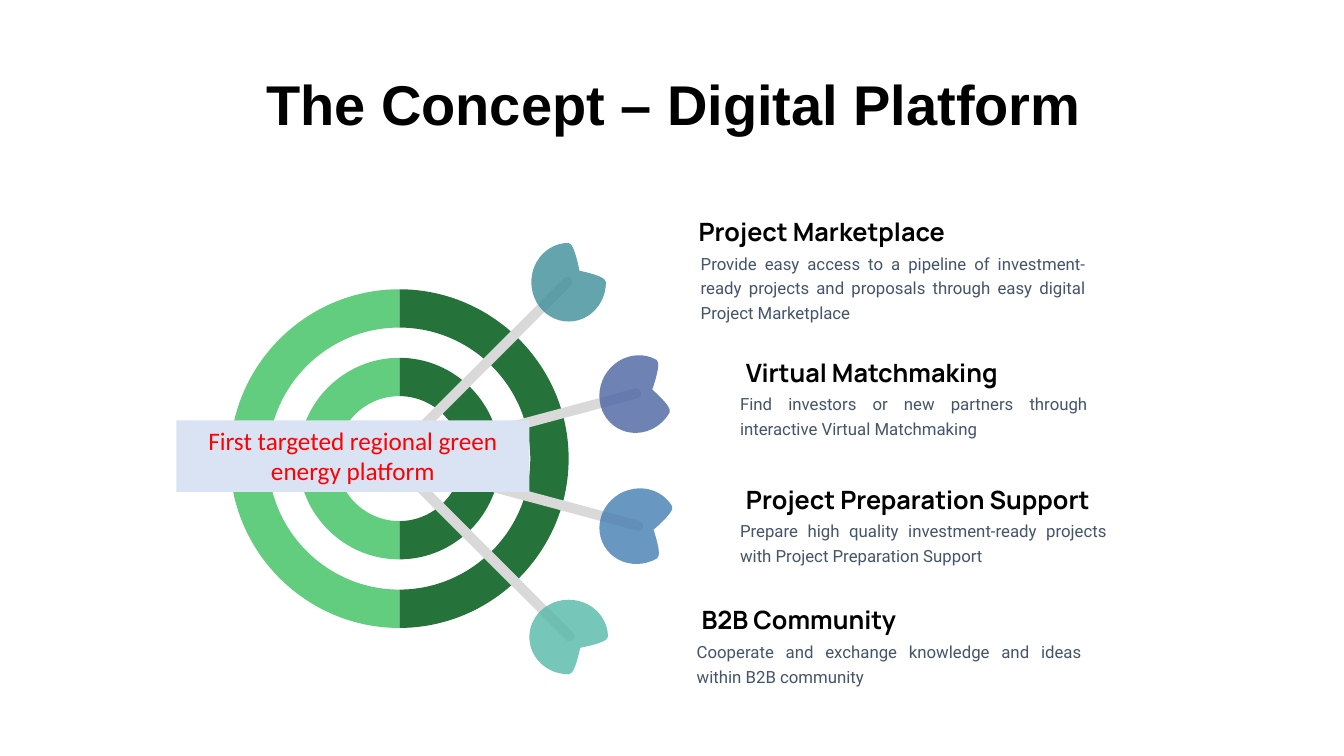
"""Build the digital platform slide: a target hit by four darts, each with a caption."""
from lxml import etree
from pptx import Presentation
from pptx.dml.color import RGBColor
from pptx.enum.shapes import MSO_SHAPE
from pptx.enum.text import MSO_ANCHOR, MSO_AUTO_SIZE, PP_ALIGN
from pptx.oxml.ns import qn
from pptx.util import Inches, Pt

RECTANGLE = MSO_SHAPE.RECTANGLE
ROUNDED = MSO_SHAPE.ROUNDED_RECTANGLE
TEARDROP = MSO_SHAPE.TEAR
TOP, MIDDLE = MSO_ANCHOR.TOP, MSO_ANCHOR.MIDDLE
LEFT, CENTER, JUSTIFY = PP_ALIGN.LEFT, PP_ALIGN.CENTER, PP_ALIGN.JUSTIFY
NO_FIT, GROW = MSO_AUTO_SIZE.NONE, MSO_AUTO_SIZE.SHAPE_TO_FIT_TEXT

BLACK = RGBColor(0x00, 0x00, 0x00)
SLATE = RGBColor(0x44, 0x54, 0x6A)
RED = RGBColor(0xFF, 0x00, 0x00)
PALE_BLUE = RGBColor(0xDA, 0xE3, 0xF3)
DARK_GREEN = RGBColor(0x25, 0x73, 0x3A)
LIGHT_GREEN = RGBColor(0x62, 0xCD, 0x7F)
GREY = RGBColor(0xD9, 0xD9, 0xD9)
INDIGO = RGBColor(0x4A, 0x63, 0xA2)
TEAL = RGBColor(0x3E, 0x8E, 0x99)
MINT = RGBColor(0x54, 0xB8, 0xA8)
BLUE = RGBColor(0x43, 0x7D, 0xB2)

TARGET_X, TARGET_Y = 3.96, 4.55
DISC_RADIUS = 0.32
RINGS = [(1.0, 0.62), (1.68, 1.3)]
BEND = 0.55
HALF_CIRCLE = [(0, -1), (BEND, -1), (1, -BEND), (1, 0), (1, BEND), (BEND, 1), (0, 1)]
CURVE_STARTS = (1, 4, 8, 11)
STRAIGHT = 7
SHAFT_WIDTH, SHAFT_LENGTH = 0.1, 2.27
FLIGHT_WIDTH, FLIGHT_HEIGHT = 0.74, 0.78

# shaft left, shaft top, shaft angle, flight left, flight top, colour
DARTS = [
    (5.21, 3.05, 75, 5.95, 3.52, INDIGO),
    (4.81, 2.43, 45, 5.27, 2.41, TEAL),
    (4.83, 4.41, 135, 5.27, 5.93, MINT),
    (5.23, 3.8, 105, 5.96, 4.83, BLUE),
]

# top, heading left, heading width, body left, body width, body height, heading, body
CAPTIONS = [
    (2.1, 6.83, 2.82, 6.86, 4, 0.8, "Project Marketplace",
     "Provide easy access to a pipeline of investment-ready projects and "
     "proposals through easy digital Project Marketplace"),
    (3.49, 7.3, 2.98, 7.25, 3.63, 0.56, "Virtual Matchmaking",
     "Find investors or new partners through interactive Virtual Matchmaking"),
    (4.75, 7.3, 3.82, 7.25, 3.82, 0.56, "Project Preparation Support",
     "Prepare high quality investment-ready projects with Project Preparation Support"),
    (5.95, 6.86, 2.3, 6.82, 4, 0.56, "B2B Community",
     "Cooperate and exchange knowledge and ideas within B2B community"),
]
BODY_OFFSET = 0.34


def write(frame, text, font, size, color, bold=False, align=LEFT, spacing=1.0):
    """Put one formatted run in the first paragraph of a text frame."""
    para = frame.paragraphs[0]
    para.alignment = align
    para.line_spacing = spacing
    span = para.add_run()
    span.text = text
    span.font.name = font
    span.font.size = Pt(size)
    span.font.bold = bold
    span.font.color.rgb = color


def paint(shape, color):
    """Give a shape a plain fill without outline or shadow."""
    shape.shadow.inherit = False
    shape.fill.solid()
    shape.fill.fore_color.rgb = color
    shape.line.fill.background()


def add_shape(page, kind, left, top, width, height, color, angle=0):
    """Add a painted preset shape."""
    shape = page.shapes.add_shape(
        kind, Inches(left), Inches(top), Inches(width), Inches(height))
    shape.rotation = angle
    paint(shape, color)
    return shape


def add_title(page, text):
    """Place and fill the title placeholder."""
    title = page.shapes.title
    title.left, title.top = Inches(2.54), Inches(0.34)
    title.width, title.height = Inches(8.62), Inches(1.45)
    frame = title.text_frame
    frame.auto_size = NO_FIT
    frame.vertical_anchor = MIDDLE
    write(frame, text, "Arial", 40, BLACK, bold=True, spacing=0.9)


def half_arc(radius, side):
    """List the curve points of a half circle from top to bottom on one side."""
    return [(Inches(TARGET_X + side * radius * x), Inches(TARGET_Y + radius * y))
            for x, y in HALF_CIRCLE]


def bend_segments(shape):
    """Turn each three segments of an arc into one curve."""
    position, curve = 0, None
    for step in list(shape.element.iter(qn("a:moveTo"), qn("a:lnTo"))):
        if step.tag == qn("a:moveTo"):
            position = 0
            continue
        position += 1
        if position == STRAIGHT:
            continue
        if position in CURVE_STARTS:
            curve = etree.Element(qn("a:cubicBezTo"))
            step.addprevious(curve)
        curve.append(step[0])
        step.getparent().remove(step)


def add_half_target(page, side, color):
    """Draw the disc and rings on one side of the target as one outline."""
    disc = half_arc(DISC_RADIUS, side)
    builder = page.shapes.build_freeform(*disc[0])
    builder.add_line_segments(disc[1:], close=True)
    for outer, inner in RINGS:
        points = half_arc(outer, side) + half_arc(inner, side)[::-1]
        builder.move_to(*points[0])
        builder.add_line_segments(points[1:], close=True)
    half = builder.convert_to_shape()
    bend_segments(half)
    paint(half, color)


def add_dart(page, shaft_left, shaft_top, angle, flight_left, flight_top, color):
    """Draw a dart: a round-ended shaft and a translucent flight."""
    shaft = add_shape(page, ROUNDED, shaft_left, shaft_top,
                      SHAFT_WIDTH, SHAFT_LENGTH, GREY, angle)
    shaft.adjustments[0] = 0.5
    flight = add_shape(page, TEARDROP, flight_left, flight_top,
                       FLIGHT_WIDTH, FLIGHT_HEIGHT, color, angle - 45.3)
    flight.adjustments[0] = 0.291
    fill_color = flight.element.spPr.find(qn("a:solidFill"))[0]
    etree.SubElement(fill_color, qn("a:alpha")).set("val", "80000")


def add_text_box(page, left, top, width, height, wrap, anchor):
    """Add an empty text box and return its frame."""
    box = page.shapes.add_textbox(
        Inches(left), Inches(top), Inches(width), Inches(height))
    frame = box.text_frame
    frame.word_wrap = wrap
    frame.auto_size = GROW
    frame.vertical_anchor = anchor
    return frame


def add_caption(page, top, heading_left, heading_width, body_left, body_width,
                body_height, heading, body):
    """Add a heading with its justified description below."""
    frame = add_text_box(page, heading_left, top, heading_width, 0.4, False, MIDDLE)
    write(frame, heading, "Manrope", 18, BLACK, bold=True)
    frame = add_text_box(page, body_left, top + BODY_OFFSET,
                         body_width, body_height, True, TOP)
    frame.margin_left = frame.margin_right = Inches(0.09)
    frame.margin_top = frame.margin_bottom = Inches(0.04)
    write(frame, body, "Roboto", 12, SLATE, align=JUSTIFY, spacing=1.2)


def add_banner(page, text):
    """Add the banner across the target."""
    banner = add_shape(page, RECTANGLE, 1.75, 4.17, 3.5, 0.71, PALE_BLUE)
    frame = banner.text_frame
    frame.word_wrap = True
    frame.auto_size = GROW
    frame.vertical_anchor = TOP
    write(frame, text, "Calibri", 18, RED, align=CENTER)


def main():
    """Build and save the deck."""
    deck = Presentation()
    deck.slide_width, deck.slide_height = Inches(13.33), Inches(7.5)
    page = deck.slides.add_slide(deck.slide_layouts[5])
    add_title(page, "The Concept – Digital Platform")
    add_half_target(page, 1, DARK_GREEN)
    add_half_target(page, -1, LIGHT_GREEN)
    for dart in DARTS:
        add_dart(page, *dart)
    for caption in CAPTIONS:
        add_caption(page, *caption)
    add_banner(page, "First targeted regional green energy platform")
    deck.save("out.pptx")


if __name__ == "__main__":
    main()
